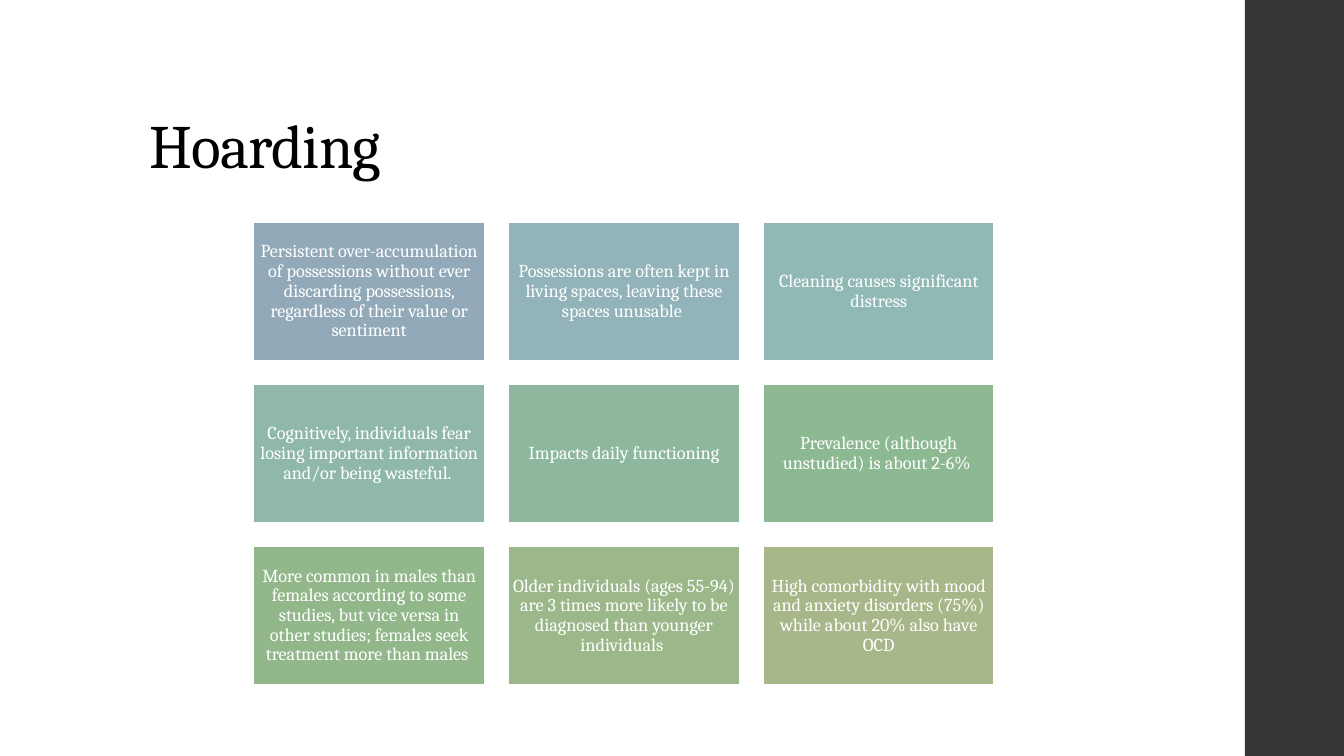
"""Build the Hoarding slide: a title, a dark side band and a grid of fact cards."""
from dataclasses import dataclass

from pptx import Presentation
from pptx.dml.color import RGBColor
from pptx.enum.shapes import MSO_SHAPE
from pptx.enum.text import MSO_ANCHOR, MSO_AUTO_SIZE, PP_ALIGN
from pptx.shapes.autoshape import Shape
from pptx.slide import Slide
from pptx.text.text import TextFrame
from pptx.util import Pt

RECTANGLE = MSO_SHAPE.RECTANGLE
LEFT, CENTER = PP_ALIGN.LEFT, PP_ALIGN.CENTER
BOTTOM, MIDDLE = MSO_ANCHOR.BOTTOM, MSO_ANCHOR.MIDDLE
NO_AUTOFIT = MSO_AUTO_SIZE.NONE

FONT = "Cambria"
COLORS = {
    "band": "353537",
    "title": "000000",
    "white": "FFFFFF",
    "slate": "92A9B9",
    "steel": "91B3B9",
    "teal": "90B8B4",
    "sea": "8FB8A9",
    "jade": "8EB89E",
    "green": "8CB892",
    "leaf": "91B78B",
    "moss": "9CB78A",
    "olive": "A7B789",
}

SLIDE_WIDTH, SLIDE_HEIGHT = 960, 540
GRID_LEFT, GRID_TOP, GRID_COLUMNS = 180.9, 158.6, 3
CARD_WIDTH, CARD_HEIGHT, CARD_GAP = 165.4, 99.2, 16.6
CARD_INSET = 3.6


@dataclass(frozen=True)
class Card:
    """A fact and the colour key of its card."""

    text: str
    color: str


CARDS = [
    Card("Persistent over-accumulation of possessions without ever discarding "
         "possessions, regardless of their value or sentiment", "slate"),
    Card("Possessions are often kept in living spaces, leaving these spaces unusable ", "steel"),
    Card("Cleaning causes significant distress", "teal"),
    Card("Cognitively, individuals fear losing important information "
         "and/or being wasteful. ", "sea"),
    Card("Impacts daily functioning", "jade"),
    Card("Prevalence (although unstudied) is about 2-6% ", "green"),
    Card("More common in males than females according to some studies, but vice versa "
         "in other studies; females seek treatment more than males ", "leaf"),
    Card("Older individuals (ages 55-94) are 3 times more likely to be diagnosed "
         "than younger individuals ", "moss"),
    Card("High comorbidity with mood and anxiety disorders (75%) "
         "while about 20% also have OCD", "olive"),
]


def rgb(name: str) -> RGBColor:
    """Return the named colour."""
    return RGBColor.from_string(COLORS[name])


def write(frame: TextFrame, text: str, size: float, color: str,
          alignment: PP_ALIGN, anchor: MSO_ANCHOR) -> None:
    """Fill a text frame with one formatted paragraph."""
    frame.text = text
    frame.word_wrap = True
    frame.auto_size = NO_AUTOFIT
    frame.vertical_anchor = anchor
    paragraph = frame.paragraphs[0]
    paragraph.alignment = alignment
    paragraph.line_spacing = 0.9
    font = paragraph.runs[0].font
    font.name, font.size = FONT, Pt(size)
    font.color.rgb = rgb(color)


def add_rectangle(slide: Slide, left: float, top: float, width: float,
                  height: float, color: str) -> Shape:
    """Add a flat filled rectangle without an outline."""
    shape = slide.shapes.add_shape(RECTANGLE, Pt(left), Pt(top), Pt(width), Pt(height))
    shape.shadow.inherit = False
    shape.fill.solid()
    shape.fill.fore_color.rgb = rgb(color)
    shape.line.fill.background()
    return shape


def add_title(slide: Slide, text: str) -> None:
    """Place and format the slide title."""
    title = slide.shapes.title
    title.left, title.top, title.width, title.height = Pt(99.4), Pt(28.8), Pt(763.2), Pt(104.4)
    write(title.text_frame, text, 44, "title", LEFT, BOTTOM)
    run = title.text_frame.paragraphs[0].runs[0]
    run.font._element.set("spc", "-50")


def add_card(slide: Slide, card: Card, index: int) -> None:
    """Draw one card at its place in the grid."""
    row, column = divmod(index, GRID_COLUMNS)
    left = GRID_LEFT + column * (CARD_WIDTH + CARD_GAP)
    top = GRID_TOP + row * (CARD_HEIGHT + CARD_GAP)
    shape = add_rectangle(slide, left, top, CARD_WIDTH, CARD_HEIGHT, card.color)
    shape.line.color.rgb = rgb("white")
    shape.line.width = Pt(1.35)
    frame = shape.text_frame
    frame.margin_left = frame.margin_right = Pt(CARD_INSET)
    frame.margin_top = frame.margin_bottom = Pt(CARD_INSET)
    write(frame, card.text, 13, "white", CENTER, MIDDLE)
    frame.paragraphs[0].space_after = Pt(4.55)


def main() -> None:
    """Build and save the presentation."""
    presentation = Presentation()
    presentation.slide_width, presentation.slide_height = Pt(SLIDE_WIDTH), Pt(SLIDE_HEIGHT)
    slide = presentation.slides.add_slide(presentation.slide_layouts.get_by_name("Title Only"))
    add_rectangle(slide, 889.2, 0, 72, SLIDE_HEIGHT, "band").width = Pt(SLIDE_WIDTH - 889.2)
    add_title(slide, "Hoarding")
    for index, card in enumerate(CARDS):
        add_card(slide, card, index)
    presentation.save("out.pptx")


if __name__ == "__main__":
    main()
